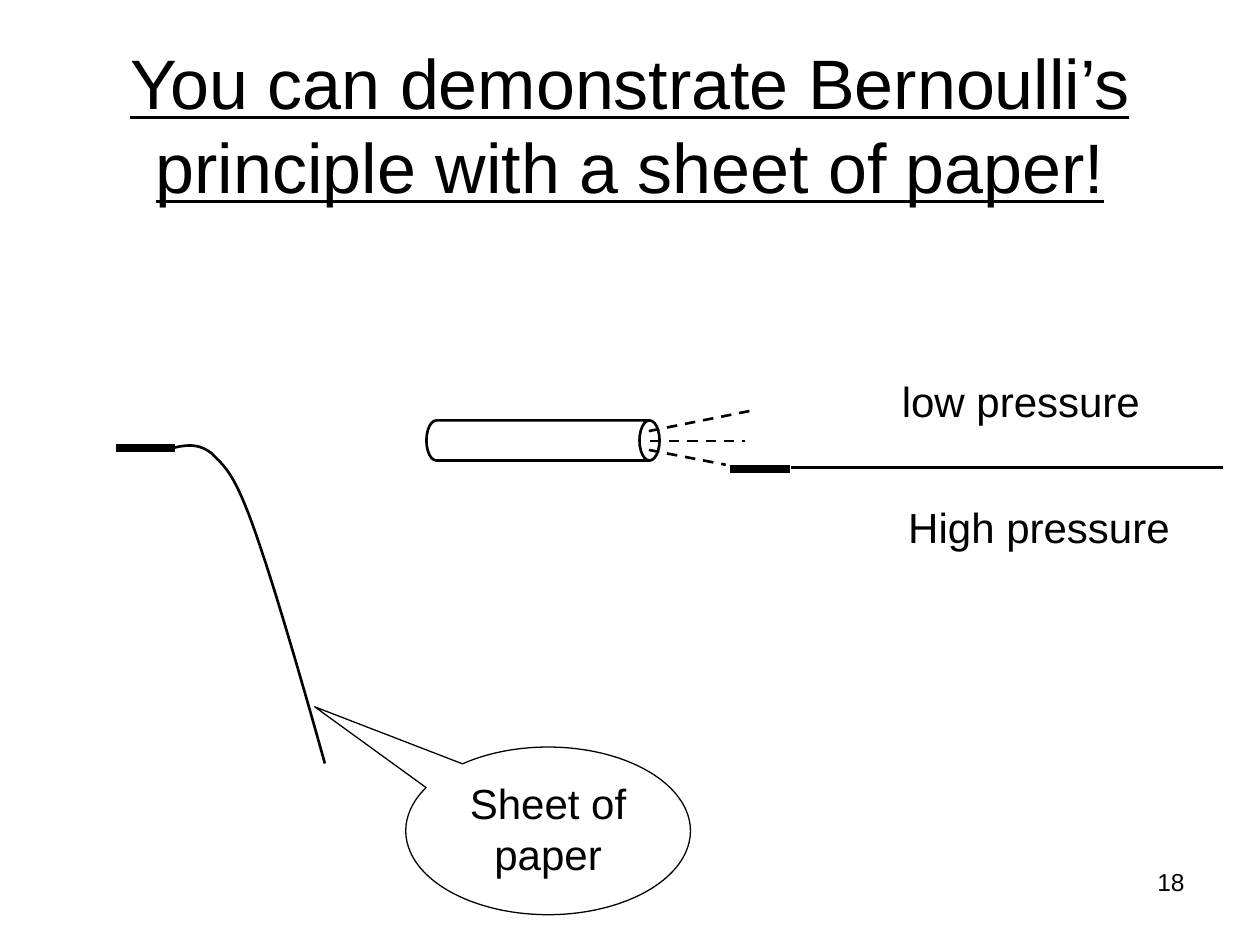
from pptx import Presentation
from pptx.dml.color import RGBColor
from pptx.enum.dml import MSO_LINE as DASH
from pptx.enum.shapes import MSO_CONNECTOR as CONN, MSO_SHAPE as SHAPE
from pptx.enum.text import MSO_ANCHOR as ANCHOR, PP_ALIGN as ALIGN
from pptx.oxml.ns import qn
from pptx.util import Cm, Pt
from lxml.etree import SubElement

BLACK, WHITE = "000000", "FFFFFF"


def rgb(value):
    return RGBColor.from_string(value)


def write(sp, text, size=24, align=ALIGN.LEFT, anchor=ANCHOR.TOP,
          underline=None, wrap=True, color=BLACK):
    tf = sp.text_frame
    tf.word_wrap, tf.vertical_anchor = wrap, anchor
    for i, line in enumerate(text.split("\n")):
        p = tf.add_paragraph() if i else tf.paragraphs[0]
        p.alignment = align
        r = p.add_run()
        r.text = line
        r.font.name, r.font.size, r.font.underline = "Arial", Pt(size), underline
        r.font.color.rgb = rgb(color)


def bezier(start, curves, steps=16):
    points = [start]
    for b, c, d in curves:
        a = points[-1]
        for i in range(1, steps + 1):
            t = i / steps
            u = 1 - t
            points.append(tuple(
                u**3 * a[k] + 3 * u * u * t * b[k] + 3 * u * t * t * c[k] + t**3 * d[k]
                for k in (0, 1)))
    return points


class Sketch:
    """Draws black outlined elements on one slide, with lengths in centimetres."""

    def __init__(self, slide, color=BLACK, fill=WHITE, width=1.5):
        self.shapes = slide.shapes
        self.color, self.fill, self.width = color, fill, width

    def outline(self, sp, width=None):
        sp.line.color.rgb = rgb(self.color)
        sp.line.width = Pt(width or self.width)

    def text(self, box, text, **style):
        write(self.shapes.add_textbox(*map(Cm, box)), text, **style)

    def line(self, start, end, width=None, dash=None):
        s = self.shapes.add_connector(CONN.STRAIGHT, *map(Cm, start + end))
        self.outline(s, width)
        s.line.dash_style = dash
        SubElement(s._element.spPr, qn("a:effectLst"))

    def curve(self, points):
        (x, y), *rest = [(Cm(x), Cm(y)) for x, y in points]
        builder = self.shapes.build_freeform(x, y)
        builder.add_line_segments(rest, close=False)
        sp = builder.convert_to_shape()
        sp.shadow.inherit = False
        sp.fill.background()
        self.outline(sp)

    def shape(self, kind, box, adjust, width=None, rotation=0):
        sp = self.shapes.add_shape(kind, *map(Cm, box))
        sp.shadow.inherit = False
        sp.fill.solid()
        sp.fill.fore_color.rgb = rgb(self.fill)
        self.outline(sp, width)
        sp.rotation = rotation
        for i, value in enumerate(adjust):
            sp.adjustments[i] = value
        return sp


def main():
    prs = Presentation()
    prs.slide_width, prs.slide_height = Cm(25.4), Cm(19.05)
    s = Sketch(prs.slides.add_slide(prs.slide_layouts[6]))

    s.text((1.27, 0.91, 22.86, 3.18),
           "You can demonstrate Bernoulli’s principle with a sheet of paper!",
           size=40, align=ALIGN.CENTER, anchor=ANCHOR.MIDDLE, underline=True)

    s.line((2.34, 9.04), (3.53, 9.04), width=4.5)
    s.curve(bezier((3.45, 9.04), [
        ((3.73, 8.97), (3.99, 8.92), (4.27, 9.14)),
        ((4.52, 9.4), (4.7, 9.5), (5.08, 10.54)),
        ((5.46, 11.58), (6.02, 13.49), (6.55, 15.39))]))

    s.line((14.71, 9.45), (15.93, 9.45), width=4.5)
    s.line((15.95, 9.42), (24.66, 9.42))
    s.shape(SHAPE.CAN, (10.54, 6.53, 0.81, 4.7), [0.5], rotation=90)
    for start, end in [((13.08, 9.07), (14.63, 9.37)),
                       ((13.11, 8.89), (15.01, 8.89)),
                       ((13.08, 8.69), (15.24, 8.26))]:
        s.line(start, end, dash=DASH.DASH)
    s.text((18.06, 9.98, 5.79, 1.27), "High pressure", wrap=False)
    s.text((17.93, 7.44, 5.31, 1.27), "low pressure", wrap=False)

    callout = s.shape(SHAPE.OVAL_CALLOUT, (8.18, 15.06, 5.74, 3.38),
                      [-0.82, -0.74], width=0.75)
    write(callout, "Sheet of\npaper", align=ALIGN.CENTER)
    s.text((18.21, 17.35, 5.92, 1.32), "18", size=14, align=ALIGN.RIGHT)

    prs.save("out.pptx")


if __name__ == "__main__":
    main()
